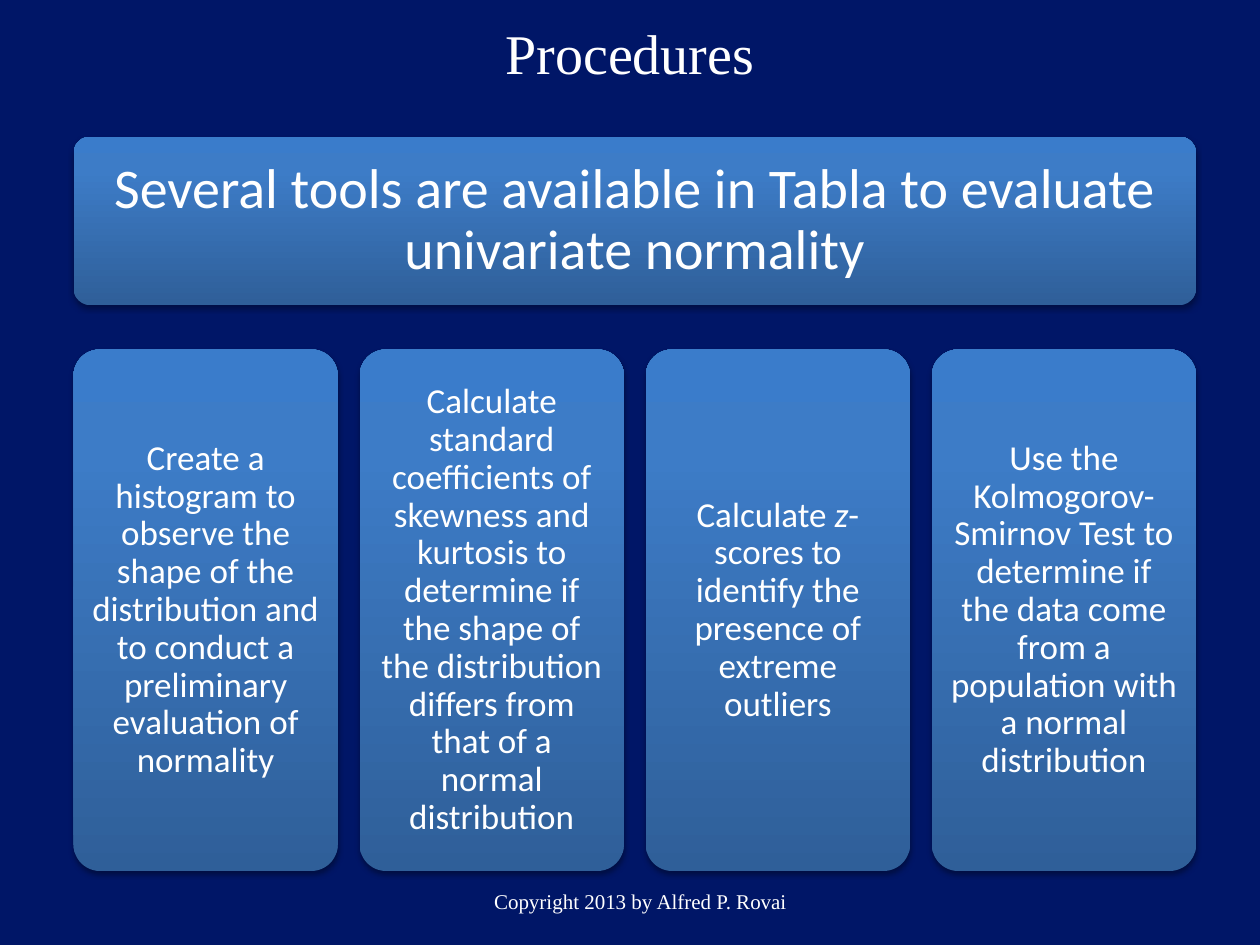
from copy import deepcopy

from lxml import etree
from pptx import Presentation
from pptx import util as u
from pptx.dml.color import RGBColor
from pptx.enum import shapes, text
from pptx.oxml import parse_xml
from pptx.oxml.ns import nsdecls, qn

Pt = u.Pt
NAVY = RGBColor(0x00, 0x16, 0x67)
WHITE = RGBColor(0xFF, 0xFF, 0xFF)
PANEL_STOPS = [
    (0, RGBColor(0x2F, 0x5F, 0x99)),
    (0.8, RGBColor(0x3D, 0x7C, 0xC7)),
    (1, RGBColor(0x3A, 0x7C, 0xCB)),
]
SERIF, SANS = "Times New Roman", "Calibri"

HEADLINE = "Several tools are available in Tabla to evaluate univariate normality"
# Each step is a list of (words, italic) runs.
STEPS = [
    [("Create a histogram to observe the shape of the distribution and to "
      "conduct a preliminary evaluation of normality", False)],
    [("Calculate standard coefficients of skewness and kurtosis to determine "
      "if the shape of the distribution differs from that of a normal "
      "distribution", False)],
    [("Calculate ", False), ("z", True),
     ("-scores to identify the presence of extreme outliers", False)],
    [("Use the Kolmogorov-Smirnov Test to determine if the data come from a "
      "population with a normal distribution", False)],
]


def write(shape, runs, font, size, inset=None, line_spacing=None):
    """Fill a shape with one centred white paragraph."""
    frame = shape.text_frame
    frame.word_wrap = True
    frame.vertical_anchor = text.MSO_ANCHOR.MIDDLE
    if inset is not None:
        for side in ("left", "right", "top", "bottom"):
            setattr(frame, f"margin_{side}", Pt(inset))
    paragraph = frame.paragraphs[0]
    paragraph.alignment = text.PP_ALIGN.CENTER
    paragraph.line_spacing = line_spacing
    for words, italic in runs:
        run = paragraph.add_run()
        run.text = words
        run.font.color.rgb = WHITE
        look = {"name": font, "size": Pt(size), "italic": italic}
        for key, value in look.items():
            setattr(run.font, key, value)


def add_panel(slide, box, runs, size, inset):
    """Add a rounded panel with a vertical gradient and a soft shadow."""
    panel = slide.shapes.add_shape(
        shapes.MSO_SHAPE.ROUNDED_RECTANGLE, *map(Pt, box))
    panel.adjustments[0] = 0.1
    panel.line.fill.background()

    panel.fill.gradient()
    panel.fill.gradient_angle = 90
    properties = panel._element.spPr
    stop_list = properties.find(qn("a:gradFill")).find(qn("a:gsLst"))
    stop_list.append(deepcopy(stop_list[-1]))
    for stop, (position, color) in zip(panel.fill.gradient_stops, PANEL_STOPS):
        stop.position = position
        stop.color.rgb = color

    panel.shadow.inherit = False
    shadow = parse_xml(
        f'<a:outerShdw {nsdecls("a")} blurRad="{Pt(3.1)}" dist="{Pt(1.8)}" '
        'dir="5400000" rotWithShape="0"/>')
    black = etree.SubElement(shadow, qn("a:srgbClr"), val="000000")
    etree.SubElement(black, qn("a:alpha"), val="35000")
    properties.find(qn("a:effectLst")).append(shadow)

    write(panel, runs, SANS, size, inset, line_spacing=0.9)


def place_title(slide, box):
    title = slide.shapes.title
    for side, length in zip(("left", "top", "width", "height"), box):
        setattr(title, side, Pt(length))
    write(title, [("Procedures", False)], SERIF, 32)


def add_steps(slide, box, gap=12.5):
    """Share the box among equally wide step panels."""
    left, top, width, height = box
    step_width = (width - gap * (len(STEPS) - 1)) / len(STEPS)
    for index, runs in enumerate(STEPS):
        step_left = left + index * (step_width + gap)
        add_panel(slide, (step_left, top, step_width, height), runs, 20, 6)


def add_copyright(slide, box):
    notice = slide.shapes.add_textbox(*map(Pt, box))
    write(notice, [("Copyright 2013 by Alfred P. Rovai", False)], SERIF, 12)


def main():
    deck = Presentation()
    deck.slide_width, deck.slide_height = Pt(720), Pt(540)
    slide = deck.slides.add_slide(deck.slide_layouts.get_by_name("Title Only"))
    slide.background.fill.solid()
    slide.background.fill.fore_color.rgb = NAVY

    place_title(slide, (36, 0, 648, 60))
    add_panel(slide, (42, 78, 641.5, 96.4), [(HEADLINE, False)], 32, 9.6)
    add_steps(slide, (42, 199.7, 641.5, 298))
    add_copyright(slide, (126, 500.5, 480, 29))
    deck.save("out.pptx")


if __name__ == "__main__":
    main()
